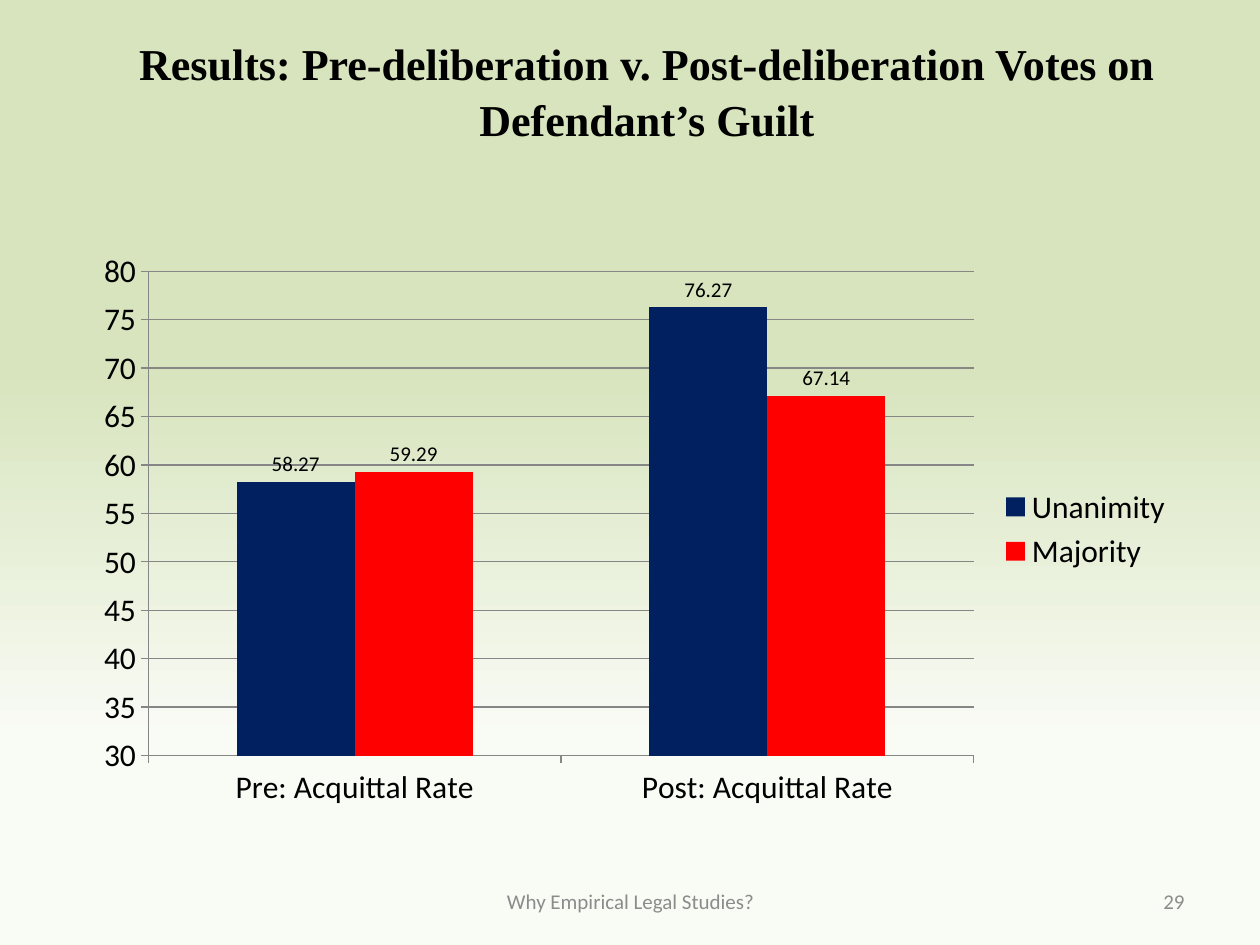
from pptx import Presentation
from pptx.chart.data import CategoryChartData
from pptx.dml.color import RGBColor
from pptx.enum.chart import (XL_CHART_TYPE, XL_LABEL_POSITION,
                             XL_LEGEND_POSITION, XL_TICK_MARK)
from pptx.enum.text import MSO_ANCHOR, PP_ALIGN
from pptx.util import Inches, Pt

COLUMNS = XL_CHART_TYPE.COLUMN_CLUSTERED
OUTSIDE_END = XL_LABEL_POSITION.OUTSIDE_END
LEGEND_RIGHT = XL_LEGEND_POSITION.RIGHT
TICK_OUT = XL_TICK_MARK.OUTSIDE
MIDDLE = MSO_ANCHOR.MIDDLE
CENTER, RIGHT = PP_ALIGN.CENTER, PP_ALIGN.RIGHT


def rgb(code):
    return RGBColor.from_string(code)


class Deck:
    BODY, HEADING = "Calibri", "Times New Roman"
    BLACK, GRAY, LINE = "000000", "8C8C8C", "868686"

    def __init__(self, prs):
        self.s = prs.slides.add_slide(prs.slide_layouts[6])

    def background(self, stops):
        fill = self.s.background.fill
        fill.gradient()
        fill.gradient_angle = 270  # counter-clockwise: runs top to bottom
        for stop, (position, color) in zip(fill.gradient_stops, stops):
            stop.position = position
            stop.color.rgb = rgb(color)

    def text(self, box, content, size=12, font=BODY, color=GRAY,
             bold=False, align=CENTER, spacing=1.0):
        sp = self.s.shapes.add_textbox(*map(Inches, box))
        tf = sp.text_frame
        tf.word_wrap = True
        tf.vertical_anchor = MIDDLE
        p = tf.paragraphs[0]
        p.alignment = align
        p.line_spacing = spacing
        r = p.add_run()
        r.text = content
        self.style(r.font, size, font, color)
        r.font.bold = bold

    def style(self, font, size, name=BODY, color=BLACK):
        font.size = Pt(size)
        font.name = name
        font.color.rgb = rgb(color)

    def line(self, fmt):
        fmt.line.color.rgb = rgb(self.LINE)
        fmt.line.width = Pt(0.75)

    def column_chart(self, box, categories, series, low, high, step):
        data = CategoryChartData()
        data.categories = categories
        for name, values, _ in series:
            data.add_series(name, values)
        chart = self.s.shapes.add_chart(COLUMNS, *map(Inches, box), data).chart
        self.style(chart.font, 18)
        chart.has_title = False
        chart.has_legend = True
        chart.legend.position = LEGEND_RIGHT
        chart.legend.include_in_layout = False

        # Axes
        for axis in (chart.category_axis, chart.value_axis):
            axis.major_tick_mark = TICK_OUT
            self.line(axis.format)
        axis = chart.value_axis
        axis.minimum_scale, axis.maximum_scale = low, high
        axis.major_unit = step
        axis.has_major_gridlines = True
        self.line(axis.major_gridlines.format)

        # Columns and their values
        plot = chart.plots[0]
        plot.vary_by_categories = False
        plot.gap_width = 150
        plot.overlap = 0
        for column, (_, _, color) in zip(plot.series, series):
            column.format.fill.solid()
            column.format.fill.fore_color.rgb = rgb(color)
            labels = column.data_labels
            labels.show_value = True
            labels.position = OUTSIDE_END
            self.style(labels.font, 12)


def main():
    prs = Presentation()
    prs.slide_width, prs.slide_height = Inches(10), Inches(7.5)
    deck = Deck(prs)
    deck.background([(0.39, "D7E4BD"), (0.78, "F9FBF5")])

    # Vote shares before and after deliberation
    deck.column_chart(
        (0.65, 1.91, 8.76, 4.58),
        ["Pre: Acquittal Rate", "Post: Acquittal Rate"],
        [("Unanimity", (58.27, 76.27), "002060"),
         ("Majority", (59.29, 67.14), "FF0000")],
        low=30, high=80, step=5)

    # Title
    deck.text((0.47, 0.21, 9.33, 0.99),
              "Results: Pre-deliberation v. Post-deliberation Votes on "
              "Defendant’s Guilt",
              size=25.2, font=deck.HEADING, color=deck.BLACK, bold=True,
              spacing=1.07)

    # Footer and page number
    deck.text((3.42, 6.95, 3.17, 0.4), "Why Empirical Legal Studies?")
    deck.text((7.17, 6.95, 2.33, 0.4), "29", align=RIGHT)

    prs.save("out.pptx")


if __name__ == "__main__":
    main()
